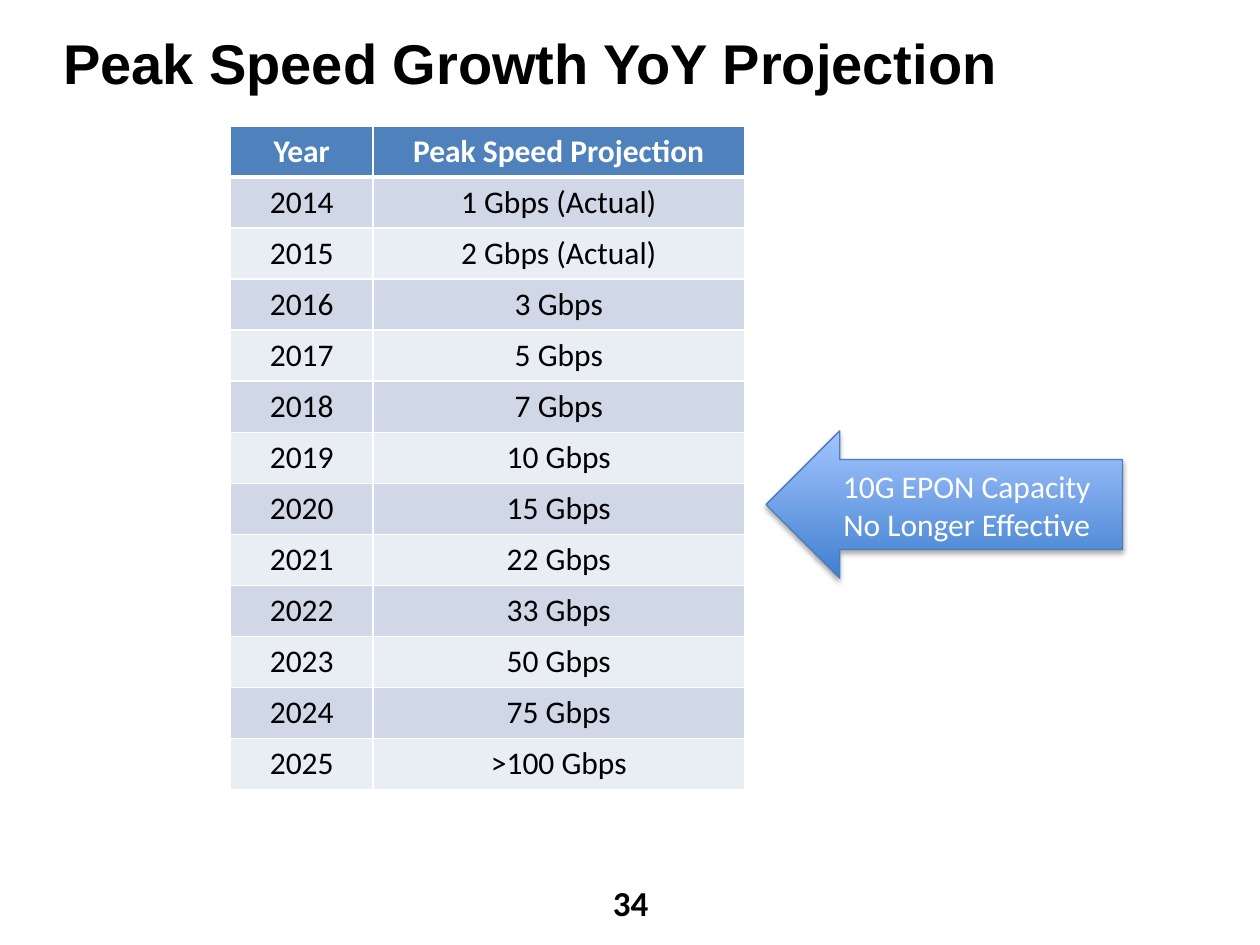
from dataclasses import dataclass

from lxml import etree
from pptx import Presentation
from pptx import util as u
from pptx.dml.color import RGBColor
from pptx.enum import shapes, text
from pptx.oxml import ns


@dataclass(frozen=True)
class Theme:
    black: str = "000000"
    white: str = "FFFFFF"
    header: str = "4F81BD"
    bands: tuple = ("D0D8E8", "E9EDF4")
    arrow_bottom: str = "3F80CE"
    arrow_top: str = "A4C4FF"
    arrow_edge: str = "4B7EBC"
    heading_font: str = "Arial"
    body_font: str = "Calibri"
    title_size: int = 32
    number_size: int = 20
    body_size: int = 18


THEME = Theme()
PROJECTION = [
    ("Year", "Peak Speed Projection"),
    ("2014", "1 Gbps (Actual)"),
    ("2015", "2 Gbps (Actual)"),
    ("2016", "3 Gbps"),
    ("2017", "5 Gbps"),
    ("2018", "7 Gbps"),
    ("2019", "10 Gbps"),
    ("2020", "15 Gbps"),
    ("2021", "22 Gbps"),
    ("2022", "33 Gbps"),
    ("2023", "50 Gbps"),
    ("2024", "75 Gbps"),
    ("2025", ">100 Gbps"),
]


def inches(*lengths):
    return [u.Inches(length) for length in lengths]


def write(frame, wording, size, color, bold=False, font=THEME.body_font,
          align=text.PP_ALIGN.CENTER):
    frame.text = wording
    frame.word_wrap = True
    paragraph = frame.paragraphs[0]
    paragraph.alignment = align
    paragraph.font.name = font
    paragraph.font.size = u.Pt(size)
    paragraph.font.bold = bold
    paragraph.font.color.rgb = RGBColor.from_string(color)
    return paragraph


def add_title(slide, wording):
    title = slide.shapes.title
    title.left, title.top, title.width, title.height = inches(0.5, 0.21, 9.29, 0.67)
    frame = title.text_frame
    frame.auto_size = text.MSO_AUTO_SIZE.NONE
    frame.vertical_anchor = text.MSO_ANCHOR.MIDDLE
    (frame.margin_left, frame.margin_top,
     frame.margin_right, frame.margin_bottom) = inches(0, 0.06, 0.11, 0.06)
    paragraph = write(frame, wording, THEME.title_size, THEME.black, True,
                      THEME.heading_font, text.PP_ALIGN.LEFT)
    paragraph.line_spacing = 0.8


def set_borders(cell, top, bottom):
    properties = cell._tc.get_or_add_tcPr()
    widths = {"lnL": 1, "lnR": 1, "lnT": top, "lnB": bottom}
    for position, (side, width) in enumerate(widths.items()):
        border = etree.Element(ns.qn(f"a:{side}"), w=str(u.Pt(width)))
        fill = etree.SubElement(border, ns.qn("a:solidFill"))
        etree.SubElement(fill, ns.qn("a:srgbClr"), val=THEME.white)
        properties.insert(position, border)


def add_projection_table(slide, rows):
    table = slide.shapes.add_table(
        len(rows), len(rows[0]), *inches(1.83, 1, 4.08, 5.27)).table
    table.columns[0].width, table.columns[1].width = inches(1.13, 2.95)
    for index, row in enumerate(rows):
        is_header = index == 0
        band = THEME.header if is_header else THEME.bands[(index - 1) % 2]
        color = THEME.white if is_header else THEME.black
        for column, wording in enumerate(row):
            cell = table.cell(index, column)
            write(cell.text_frame, wording, THEME.body_size, color, is_header)
            cell.fill.solid()
            cell.fill.fore_color.rgb = RGBColor.from_string(band)
            set_borders(cell, top=3 if index == 1 else 1,
                        bottom=3 if is_header else 1)


def add_drop_shadow(shape):
    shape.shadow.inherit = False
    effects = shape._element.spPr.find(ns.qn("a:effectLst"))
    shadow = etree.SubElement(
        effects, ns.qn("a:outerShdw"), blurRad=str(u.Pt(3.1)),
        dist=str(u.Pt(1.8)), dir="5400000", rotWithShape="0")
    color = etree.SubElement(shadow, ns.qn("a:srgbClr"), val=THEME.black)
    etree.SubElement(color, ns.qn("a:alpha"), val="35000")


def add_callout_arrow(slide, wording):
    arrow = slide.shapes.add_shape(
        shapes.MSO_SHAPE.LEFT_ARROW, *inches(6.08, 3.42, 2.83, 1.17))
    arrow.adjustments[0] = 0.61
    arrow.adjustments[1] = 0.5
    arrow.fill.gradient()
    arrow.fill.gradient_angle = 90
    for stop, color in zip(arrow.fill.gradient_stops,
                           (THEME.arrow_bottom, THEME.arrow_top)):
        stop.color.rgb = RGBColor.from_string(color)
    arrow.line.color.rgb = RGBColor.from_string(THEME.arrow_edge)
    arrow.line.width = u.Pt(0.75)
    add_drop_shadow(arrow)
    arrow.text_frame.vertical_anchor = text.MSO_ANCHOR.MIDDLE
    write(arrow.text_frame, wording, THEME.body_size, THEME.white)


def add_page_number(slide, number):
    box = slide.shapes.add_textbox(*inches(3.84, 6.95, 2.33, 0.4))
    write(box.text_frame, number, THEME.number_size, THEME.black, True)


def main():
    deck = Presentation()
    deck.slide_width, deck.slide_height = inches(10, 7.5)
    slide = deck.slides.add_slide(deck.slide_layouts[5])
    add_title(slide, "Peak Speed Growth YoY Projection")
    add_page_number(slide, "34")
    add_projection_table(slide, PROJECTION)
    add_callout_arrow(slide, "10G EPON Capacity No Longer Effective")
    deck.save("out.pptx")


if __name__ == "__main__":
    main()
